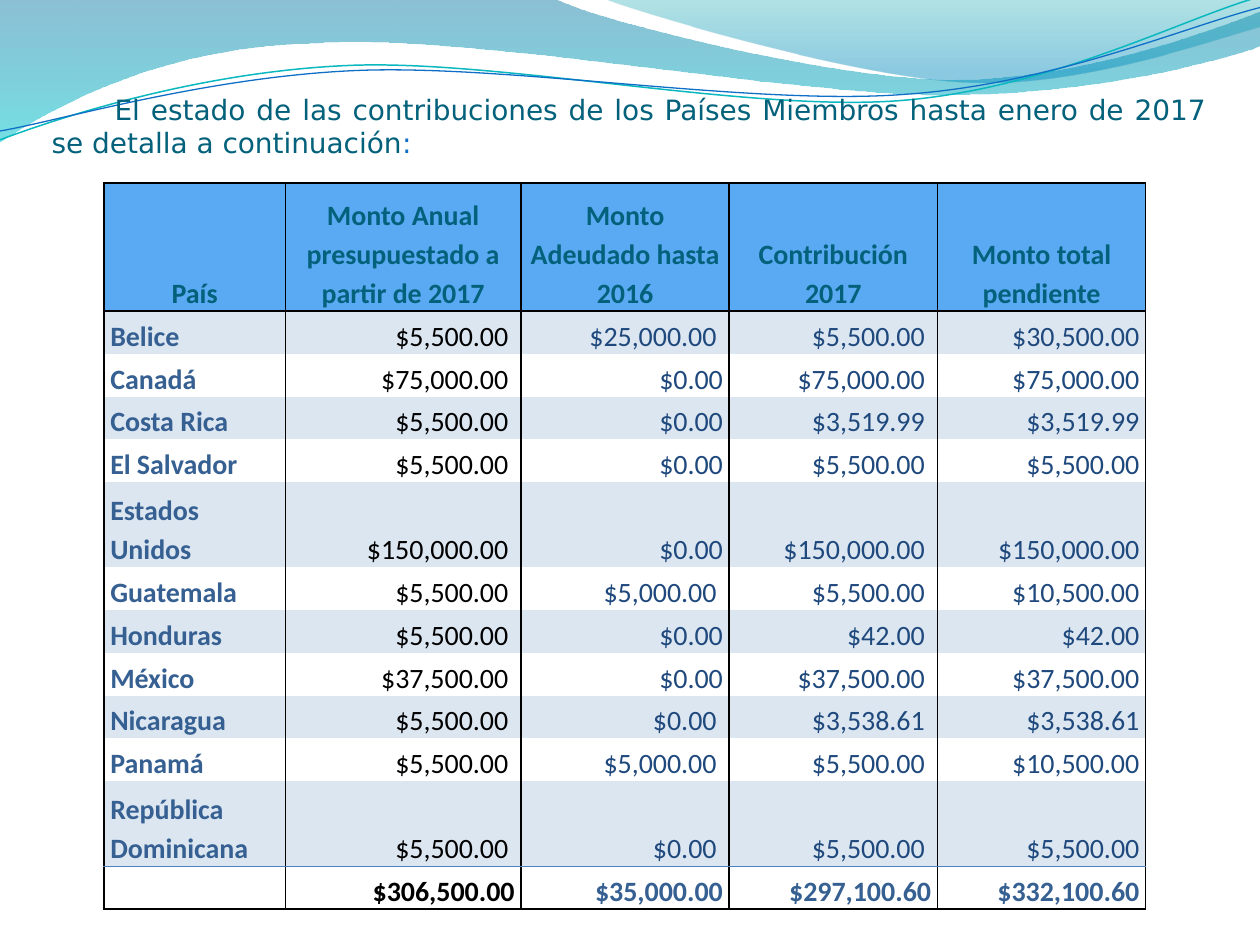
import lxml.etree
import pptx
import pptx.dml.color
import pptx.enum.text
import pptx.oxml.ns
import pptx.util

RGBColor = pptx.dml.color.RGBColor
Align = pptx.enum.text.PP_ALIGN
Anchor = pptx.enum.text.MSO_ANCHOR
qn = pptx.oxml.ns.qn

BLACK = RGBColor(0x00, 0x00, 0x00)
TEAL = RGBColor(0x04, 0x61, 0x7B)
BLUE = RGBColor(0x0F, 0x6F, 0xC6)
AQUA = RGBColor(0x0A, 0xB8, 0xBF)
HEADER_FILL = RGBColor(0x59, 0xAA, 0xF2)
BAND_FILL = RGBColor(0xDC, 0xE6, 0xF1)
COUNTRY_BLUE = RGBColor(0x36, 0x60, 0x92)
AMOUNT_BLUE = RGBColor(0x1F, 0x49, 0x7D)
TOTAL_RULE = RGBColor(0x4F, 0x81, 0xBD)
NO_TABLE_STYLE = "{2D5ABB26-0587-4C30-8999-92F81FD0307C}"

# Lengths are in grid units: the slide has 100 columns and 75 rows.
COLUMNS, ROWS = 100, 75
UNIT = pptx.util.Inches(0.1)

# Outlines: a start point, then segments of one (line) or three (curve) points.
WIDE_WAVE = [(0, 0), [(44, -0.1)],
             [(47.6, 1.7), (66.4, 6.3), (75.8, 6.3)],
             [(85.3, 6.3), (95.8, 2.6), (100, 0.9)], [(100.1, 3.6)],
             [(98.3, 4.4), (87, 7.6), (74.6, 7.5)],
             [(62.2, 7.5), (38.2, 2.8), (25.7, 3.4)],
             [(12.9, 3.6), (4.6, 8.3), (-0.1, 11.3)], [(0, 0)]]
RIGHT_WAVE = [(47.9, -0.1),
              [(50.9, 1.1), (68.2, 6.2), (76.9, 6.5)],
              [(85.6, 6.9), (96.1, 3.2), (100, 2.1)], [(100, 0)], [(47.9, -0.1)]]
AQUA_LINE = [(0, 11.1),
             [(4.8, 9.3), (15.8, 5.7), (27.7, 5.2)],
             [(39.5, 4.7), (59.3, 8.9), (71.3, 8)],
             [(83.3, 7.1), (93.8, 1.5), (99.8, -0.2)]]
BLUE_LINE = [(0, 10.4),
             [(4.7, 9.6), (16.4, 6.1), (28.3, 5.6)],
             [(40.3, 5.1), (59.7, 8.4), (71.7, 7.5)],
             [(83.6, 6.7), (94.1, 2.1), (100, 0.6)]]

HEADINGS = ["País", "Monto Anual presupuestado a partir de 2017",
            "Monto Adeudado hasta 2016", "Contribución 2017",
            "Monto total pendiente"]
CONTRIBUTIONS = [
    ["Belice", "$5,500.00 ", "$25,000.00 ", "$5,500.00 ", "$30,500.00"],
    ["Canadá", "$75,000.00 ", "$0.00", "$75,000.00 ", "$75,000.00"],
    ["Costa Rica", "$5,500.00 ", "$0.00", "$3,519.99 ", "$3,519.99"],
    ["El Salvador", "$5,500.00 ", "$0.00", "$5,500.00 ", "$5,500.00"],
    ["Estados Unidos", "$150,000.00 ", "$0.00", "$150,000.00 ", "$150,000.00"],
    ["Guatemala", "$5,500.00 ", "$5,000.00 ", "$5,500.00 ", "$10,500.00"],
    ["Honduras", "$5,500.00 ", "$0.00", "$42.00 ", "$42.00"],
    ["México", "$37,500.00 ", "$0.00", "$37,500.00 ", "$37,500.00"],
    ["Nicaragua", "$5,500.00 ", "$0.00 ", "$3,538.61 ", "$3,538.61"],
    ["Panamá", "$5,500.00 ", "$5,000.00 ", "$5,500.00 ", "$10,500.00"],
    ["República Dominicana", "$5,500.00 ", "$0.00 ", "$5,500.00 ", "$5,500.00"],
]
TOTALS = ["", "$306,500.00", "$35,000.00", "$297,100.60", "$332,100.60"]
COLUMN_WIDTHS = [14.4, 18.7, 16.53, 16.53, 16.53]
LINE_HEIGHT = 3.39
TWO_LINE_COUNTRIES = ("Estados Unidos", "República Dominicana")


def grid(units):
    return round(units * UNIT)


def write(paragraph, text, *, font, size=16, color=BLACK, bold=False):
    run = paragraph.add_run()
    run.text = text
    run.font.name, run.font.size = font, pptx.util.Pt(size)
    run.font.color.rgb, run.font.bold = color, bold


def bend(shape, segments):
    """Join the three straight lines of each curve segment into one cubic curve."""
    lines = iter(list(shape._element.iter(qn("a:lnTo"))))
    for segment in segments:
        parts = [next(lines) for _ in segment]
        if len(parts) == 3:
            curve = lxml.etree.Element(qn("a:cubicBezTo"))
            parts[0].addprevious(curve)
            for part in parts:
                curve.append(part[0])
                part.getparent().remove(part)


def border(cell, side, color):
    line = lxml.etree.SubElement(cell._tc.get_or_add_tcPr(), qn(f"a:ln{side}"),
                                 w=str(pptx.util.Pt(1)))
    if color is None:
        lxml.etree.SubElement(line, qn("a:noFill"))
    else:
        solid = lxml.etree.SubElement(line, qn("a:solidFill"))
        lxml.etree.SubElement(solid, qn("a:srgbClr"), val=str(color))


class ContributionSlide:
    """Holds the fonts and the current slide, and adds elements on its grid."""

    heading_font = "DejaVu Sans"
    table_font = "Calibri"

    def __init__(self, deck):
        self.slide = deck.slides.add_slide(deck.slide_layouts[5])
        self.master = deck.slide_master

    def outline(self, outline, close):
        """Add a curved outline to the slide master, behind all content."""
        start, *segments = outline
        builder = self.slide.shapes.build_freeform(grid(start[0]), grid(start[1]))
        builder.add_line_segments([(grid(x), grid(y)) for segment in segments
                                   for x, y in segment], close=close)
        shape = builder.convert_to_shape()
        bend(shape, segments)
        shape.shadow.inherit = False
        self.master.shapes._spTree.append(shape._element)
        return shape

    def wave(self, outline, stops):
        """Add a filled wave; each stop is position, colour and opacity percent."""
        shape = self.outline(outline, close=True)
        shape.line.fill.background()
        shape.fill.gradient()
        shape.fill.gradient_angle = 270
        for stop, (position, color, _) in zip(shape.fill.gradient_stops, stops):
            stop.position, stop.color.rgb = position, color
        colors = shape._element.spPr.iter(qn("a:srgbClr"))
        for element, (_, _, opacity) in zip(list(colors), stops):
            lxml.etree.SubElement(element, qn("a:alpha"), val=str(opacity * 1000))

    def strand(self, outline, color, width):
        shape = self.outline(outline, close=False)
        shape.fill.background()
        shape.line.color.rgb, shape.line.width = color, pptx.util.Pt(width)

    def heading(self, left, top, width, height, parts):
        title = self.slide.shapes.title
        title.left, title.top = grid(left), grid(top)
        title.width, title.height = grid(width), grid(height)
        frame = title.text_frame
        frame.word_wrap, frame.vertical_anchor = True, Anchor.MIDDLE
        frame.auto_size = pptx.enum.text.MSO_AUTO_SIZE.NONE
        paragraph = frame.paragraphs[0]
        paragraph.alignment = Align.JUSTIFY
        properties = paragraph._p.get_or_add_pPr()
        properties.set("marL", "0")
        properties.set("indent", str(grid(5)))
        for text, color in parts:
            write(paragraph, text, font=self.heading_font, color=color)

    def cell(self, cell, text, align, fill, top, bottom, **text_format):
        cell.margin_left = cell.margin_right = grid(0.5)
        cell.margin_top = cell.margin_bottom = 0
        cell.vertical_anchor = Anchor.BOTTOM
        for side, color in zip("LRTB", (BLACK, BLACK, top, bottom)):
            border(cell, side, color)
        if fill is None:
            cell.fill.background()
        else:
            cell.fill.solid()
            cell.fill.fore_color.rgb = fill
        paragraph = cell.text_frame.paragraphs[0]
        paragraph.alignment, paragraph.line_spacing = align, 1.15
        if text:
            write(paragraph, text, font=self.table_font, **text_format)

    def table(self, left, top, widths, records):
        heights = [LINE_HEIGHT * (2 if record[0] in TWO_LINE_COUNTRIES else 1)
                   for record in records]
        heights[0] = 3 * LINE_HEIGHT
        table = self.slide.shapes.add_table(
            len(records), len(widths), grid(left), grid(top),
            grid(sum(widths)), grid(sum(heights))).table
        table.first_row = table.horz_banding = False
        table._tbl.tblPr.find(qn("a:tableStyleId")).text = NO_TABLE_STYLE
        for column, width in zip(table.columns, widths):
            column.width = grid(width)
        for row, height in zip(table.rows, heights):
            row.height = grid(height)

        total = len(records) - 1
        rules = {0: BLACK, 1: BLACK, total: TOTAL_RULE, total + 1: BLACK}
        for r, record in enumerate(records):
            fill = HEADER_FILL if r == 0 else BAND_FILL if r % 2 and r < total else None
            for c, text in enumerate(record):
                align = Align.CENTER if r == 0 else Align.RIGHT if c else Align.LEFT
                bold = r in (0, total) or c == 0
                color = (TEAL if r == 0 else BLACK if c == 1
                         else COUNTRY_BLUE if bold else AMOUNT_BLUE)
                self.cell(table.cell(r, c), text, align, fill,
                          rules.get(r), rules.get(r + 1), color=color, bold=bold)


def main():
    deck = pptx.Presentation()
    deck.slide_width, deck.slide_height = grid(COLUMNS), grid(ROWS)
    page = ContributionSlide(deck)
    page.wave(WIDE_WAVE, [(0, RGBColor(0x00, 0x74, 0xA1), 45),
                          (1, RGBColor(0x00, 0xC6, 0xCF), 55)])
    page.wave(RIGHT_WAVE, [(0, RGBColor(0x00, 0xA1, 0xA9), 30),
                           (0.8, RGBColor(0x00, 0x8B, 0xBF), 45)])
    page.strand(AQUA_LINE, AQUA, 0.85)
    page.strand(BLUE_LINE, BLUE, 0.75)
    page.table(8.25, 14.53, COLUMN_WIDTHS, [HEADINGS, *CONTRIBUTIONS, TOTALS])
    page.heading(3.1, 6.8, 93.7, 6.4, [
        ("El estado de las contribuciones de los Países Miembros hasta enero "
         "de 2017 se detalla a continuación", TEAL), (": ", BLUE)])
    deck.save("out.pptx")


if __name__ == "__main__":
    main()
